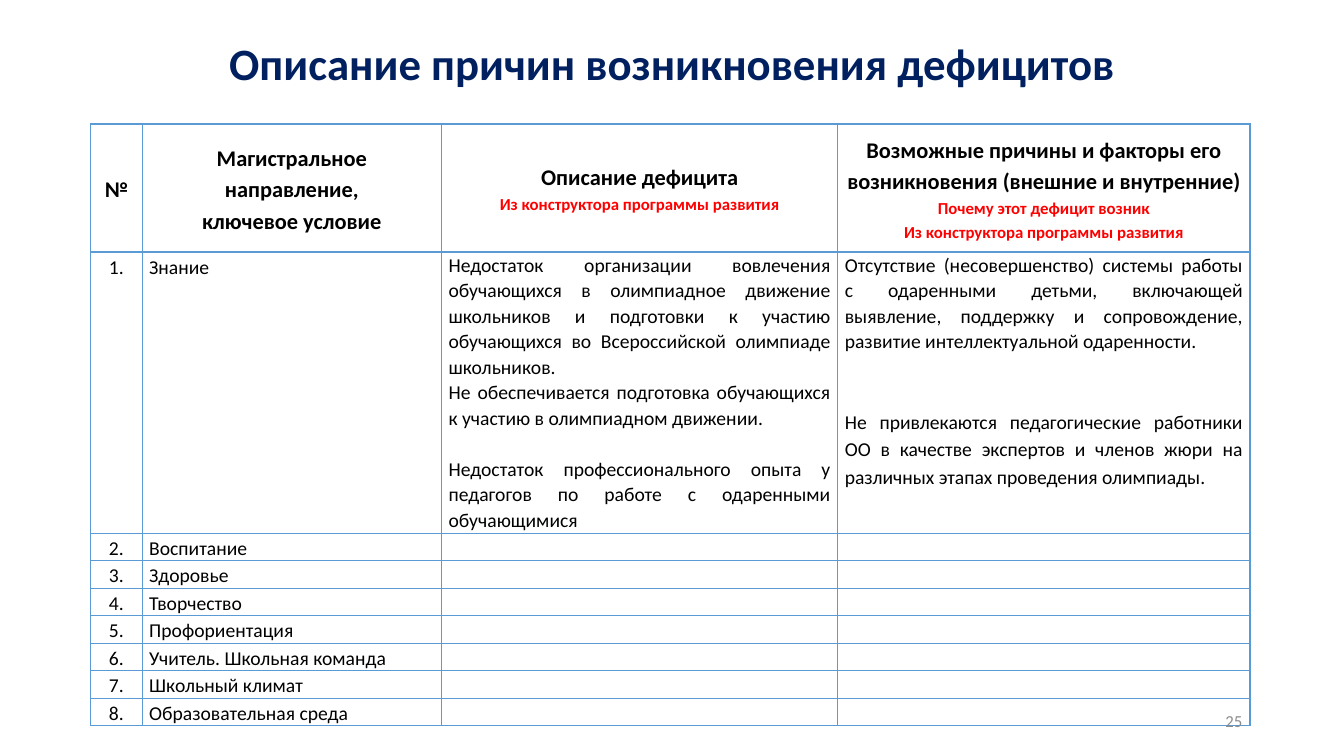
from lxml.etree import SubElement
from pptx import Presentation
from pptx.dml.color import RGBColor
from pptx.enum.text import MSO_ANCHOR, PP_ALIGN
from pptx.oxml.ns import qn
from pptx.util import Inches, Pt

WIDE, HIGH = Inches(13.33), Inches(7.5)
FONT = "Calibri"
NAVY = RGBColor(0x00, 0x20, 0x60)
BLACK = RGBColor(0x00, 0x00, 0x00)
RED = RGBColor(0xFF, 0x00, 0x00)
GRAY = RGBColor(0x8C, 0x8C, 0x8C)
BLUE = RGBColor(0x5B, 0x9B, 0xD5)

COLS = (3.83, 22.28, 29.48, 30.68)
HEAD_ROW, FIRST_ROW, NEXT_ROW = 16.93, 37.2, 3.64

SOURCE = "Из конструктора программы развития"
HEADS = (
    ("№", ()),
    ("Магистральное направление,\nключевое условие", ()),
    ("Описание дефицита", (SOURCE,)),
    ("Возможные причины и факторы его возникновения (внешние и внутренние)",
     ("Почему этот дефицит возник", SOURCE)),
)
TOPICS = ("Знание", "Воспитание", "Здоровье", "Творчество", "Профориентация",
          "Учитель. Школьная команда", "Школьный климат", "Образовательная среда")
GAPS = (
    ("Недостаток организации вовлечения обучающихся в олимпиадное движение школьников "
     "и подготовки к участию обучающихся во Всероссийской олимпиаде школьников.", 1.07, 0),
    ("Не обеспечивается подготовка обучающихся к участию в олимпиадном движении.", 1.07, 0),
    ("Недостаток профессионального опыта у педагогов по работе с одаренными обучающимися",
     1.07, 18),
)
CAUSES = (
    ("Отсутствие (несовершенство) системы работы с одаренными детьми, включающей выявление, "
     "поддержку и сопровождение, развитие интеллектуальной одаренности.", 1.07, 0),
    ("Не привлекаются педагогические работники ОО в качестве экспертов и членов жюри "
     "на различных этапах проведения олимпиады.", 1.15, 38),
)


def across(share):
    """Turn a percentage of the slide width into a length."""
    return int(WIDE * share / 100)


def down(share):
    """Turn a percentage of the slide height into a length."""
    return int(HIGH * share / 100)


def write(frame, text, size, color=BLACK, bold=False, align=PP_ALIGN.CENTER,
          lines=1.15, before=0):
    """Add one styled paragraph, filling the first if it is still empty."""
    first = frame.paragraphs[0]
    para = frame.add_paragraph() if first.text else first
    para.text = text
    para.alignment = align
    para.line_spacing = lines
    if before:
        para.space_before = Pt(before)
    font = para.font
    font.name, font.size, font.bold = FONT, Pt(size), bold
    font.color.rgb = color


def label(slide, box, text, size, color, **style):
    """Place a line of text, with the box given in slide percentages."""
    left, top, width, height = box
    frame = slide.shapes.add_textbox(
        across(left), down(top), across(width), down(height)).text_frame
    frame.word_wrap = True
    frame.vertical_anchor = MSO_ANCHOR.MIDDLE
    write(frame, text, size, color, **style)


def edge(cell, side, width):
    """Draw one border of a cell."""
    line = SubElement(cell._tc.get_or_add_tcPr(), qn(f"a:ln{side}"), w=str(Pt(width)))
    fill = SubElement(line, qn("a:solidFill"))
    SubElement(fill, qn("a:srgbClr"), val=str(BLUE))


def style_cell(cell, row):
    """Set the borders, margins and fill of a cell."""
    for side in "LRTB":
        thick = (row, side) in ((0, "B"), (1, "T"))
        edge(cell, side, 2 if thick else 1)
    cell.fill.background()
    cell.margin_left = cell.margin_right = Inches(0.07)
    cell.margin_top = cell.margin_bottom = 0
    cell.vertical_anchor = MSO_ANCHOR.TOP if row else MSO_ANCHOR.MIDDLE


def build_table(slide):
    """Build the table of gaps and their causes."""
    rows = (HEAD_ROW, FIRST_ROW) + (NEXT_ROW,) * (len(TOPICS) - 1)
    table = slide.shapes.add_table(
        len(rows), len(COLS), across(6.75), down(16.4),
        across(sum(COLS)), down(sum(rows))).table
    table.first_row = table.horz_banding = False
    for column, share in zip(table.columns, COLS):
        column.width = across(share)
    for index, share in enumerate(rows):
        table.rows[index].height = down(share)
        for cell in table.rows[index].cells:
            style_cell(cell, index)

    for col, (head, notes) in enumerate(HEADS):
        frame = table.cell(0, col).text_frame
        write(frame, head, 16, bold=True)
        for note in notes:
            write(frame, note, 12, RED, bold=True)
    for row, topic in enumerate(TOPICS, 1):
        write(table.cell(row, 0).text_frame, f"{row}.", 14)
        write(table.cell(row, 1).text_frame, topic, 14, align=PP_ALIGN.JUSTIFY)
    for col, texts in ((2, GAPS), (3, CAUSES)):
        for text, lines, before in texts:
            write(table.cell(1, col).text_frame, text, 14,
                  align=PP_ALIGN.JUSTIFY, lines=lines, before=before)
        for row in range(2, len(rows)):
            para = table.cell(row, col).text_frame.paragraphs[0]
            SubElement(para._p, qn("a:endParaRPr"), sz="1400")


def main():
    """Build the slide and save it."""
    deck = Presentation()
    deck.slide_width, deck.slide_height = WIDE, HIGH
    slide = deck.slides.add_slide(deck.slide_layouts[6])
    label(slide, (6.9, 5.33, 86.27, 6.93), "Описание причин возникновения дефицитов",
          32, NAVY, bold=True, lines=0.9)
    build_table(slide)
    label(slide, (70.67, 92.67, 22.5, 5.33), "25", 12, GRAY,
          align=PP_ALIGN.RIGHT, lines=1)
    deck.save("out.pptx")


if __name__ == "__main__":
    main()
